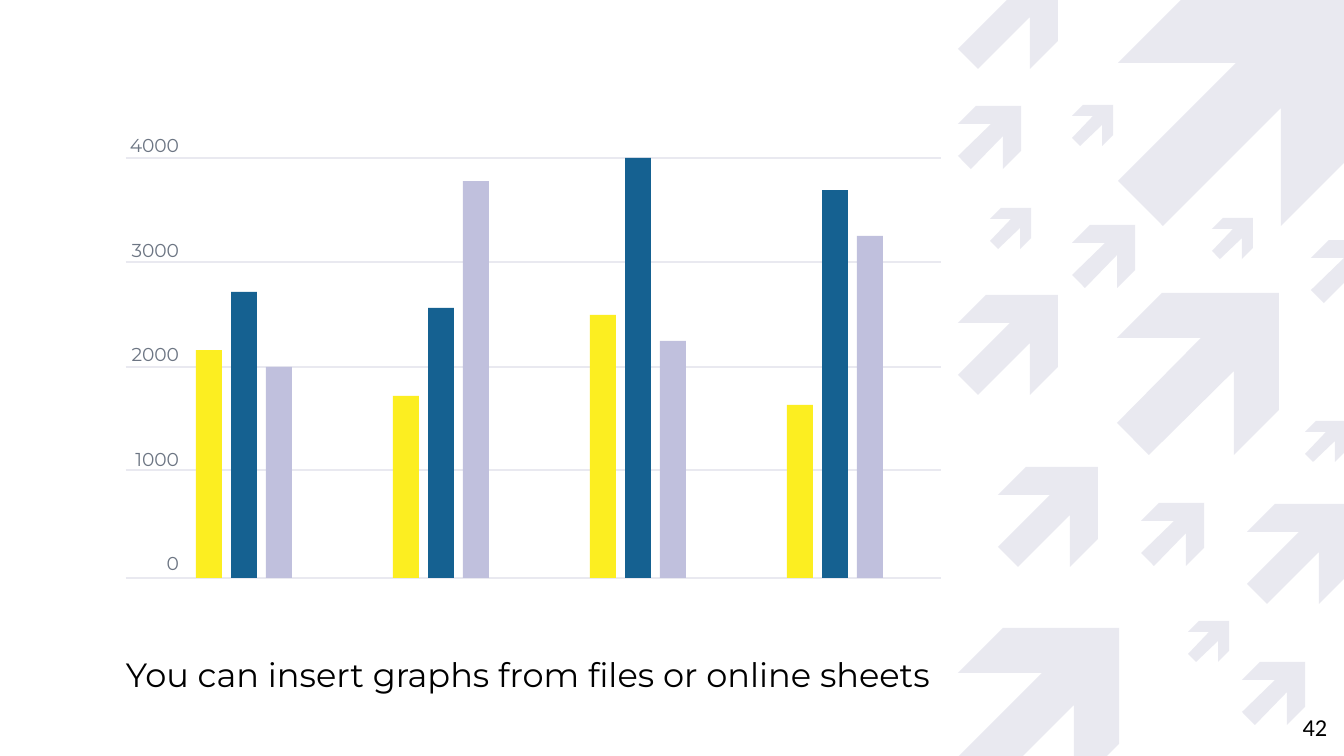
"""Build a slide with a grouped bar graph beside a pattern of arrows."""
from dataclasses import dataclass
from typing import Any, NamedTuple

from lxml import etree
from pptx import Presentation
from pptx.dml.color import RGBColor
from pptx.enum.shapes import MSO_CONNECTOR, MSO_SHAPE
from pptx.enum.text import MSO_ANCHOR, PP_ALIGN
from pptx.oxml.ns import qn
from pptx.shapes.base import BaseShape
from pptx.slide import Slide
from pptx.util import Emu, Pt

RECT, STRAIGHT = MSO_SHAPE.RECTANGLE, MSO_CONNECTOR.STRAIGHT
TOP, MIDDLE = MSO_ANCHOR.TOP, MSO_ANCHOR.MIDDLE
LEFT, RIGHT = PP_ALIGN.LEFT, PP_ALIGN.RIGHT
EMU_PER_PX = 914400 / 134.4
SLIDE_W, SLIDE_H = 1344, 756


@dataclass(frozen=True)
class Theme:
    pale: str = "E9E9F0"
    ink: str = "000000"
    muted: str = "6C7583"
    series: tuple[str, ...] = ("FCEE21", "156191", "C0C0DD")
    body_font: str = "Montserrat"
    number_font: str = "Calibri"
    caption_size: int = 18
    number_size: int = 13
    label_size: int = 10
    grid_width: float = 0.75


class Arrow(NamedTuple):
    x: int
    y: int
    size: int


class Bar(NamedTuple):
    x: int
    top: int
    color: str


class Label(NamedTuple):
    box: tuple[int, int, int, int]
    lines: tuple[str, ...]
    font: str
    size: int
    color: str
    align: PP_ALIGN
    anchor: MSO_ANCHOR
    spacing: dict[str, Any]


THEME = Theme()
ARROW_OUTLINE = ((0, 0.28), (0.52, 0.28), (0, 0.8), (0.2, 1), (0.72, 0.48),
                 (0.72, 1), (1, 0.72), (1, 0), (0.28, 0))
ARROWS = (
    Arrow(1188, 621, 41), Arrow(1242, 662, 63), Arrow(1141, 503, 63),
    Arrow(1117, 293, 162), Arrow(958, 628, 161), Arrow(958, -31, 100),
    Arrow(1212, 218, 41), Arrow(1072, 225, 63), Arrow(1247, 504, 100),
    Arrow(1311, 240, 63), Arrow(1072, 105, 41), Arrow(998, 467, 100),
    Arrow(1118, 0, 226), Arrow(1305, 421, 41), Arrow(990, 208, 41),
    Arrow(958, 295, 100), Arrow(958, 106, 63),
)
GRID_LEFT, GRID_RIGHT = 126, 941
GRID_ROWS = (158, 262, 367, 470, 578)
BASELINE = GRID_ROWS[-1]
BAR_LEFT, BAR_W, BAR_STEP, GROUP_STEP = 196, 26, 35, 197
BAR_TOPS = ((350, 292, 367), (396, 308, 181), (315, 158, 341), (405, 190, 236))
BARS = tuple(
    Bar(BAR_LEFT + g * GROUP_STEP + i * BAR_STEP, top, THEME.series[i])
    for g, tops in enumerate(BAR_TOPS) for i, top in enumerate(tops)
)
CAPTION = Label((126, 648, 1093, 51),
                ("You can insert graphs from files or online sheets",),
                THEME.body_font, THEME.caption_size, THEME.ink, LEFT, TOP,
                {"line_spacing": 1.15, "space_after": Pt(8)})
NUMBER = Label((1246, 698, 81, 57), ("42",), THEME.number_font,
               THEME.number_size, THEME.ink, RIGHT, MIDDLE, {})
SCALE = Label((126, 134, 53, 445), ("4000", "3000", "2000", "1000", "0"),
              THEME.body_font, THEME.label_size, THEME.muted, RIGHT, TOP,
              {"space_before": Pt(44)})


def px(n: float) -> Emu:
    """Turn pixels into EMU."""
    return Emu(round(n * EMU_PER_PX))


def set_all(obj: Any, values: dict[str, Any]) -> None:
    """Set each named attribute of an object."""
    for name, value in values.items():
        setattr(obj, name, value)


def paint(sp: BaseShape, color: str) -> None:
    """Give a shape a flat fill with no outline or shadow."""
    sp.shadow.inherit = False
    sp.fill.solid()
    sp.fill.fore_color.rgb = RGBColor.from_string(color)
    sp.line.fill.background()


def clip(points: list[tuple[float, float]], axis: int, limit: int,
         sign: int) -> list[tuple[float, float]]:
    """Cut a polygon at one edge of the slide."""
    kept = []
    for a, b in zip(points, points[1:] + points[:1]):
        da, db = sign * (limit - a[axis]), sign * (limit - b[axis])
        if da >= 0:
            kept.append(a)
        if da * db < 0:
            t = da / (da - db)
            kept.append((a[0] + t * (b[0] - a[0]), a[1] + t * (b[1] - a[1])))
    return kept


def draw_arrow(s: Slide, arrow: Arrow) -> None:
    """Draw the part of an arrow that lies on the slide."""
    points = [(arrow.x + u * arrow.size, arrow.y + v * arrow.size)
              for u, v in ARROW_OUTLINE]
    for axis, limit, sign in ((0, SLIDE_W, 1), (1, SLIDE_H, 1), (1, 0, -1)):
        points = clip(points, axis, limit, sign)
    builder = s.shapes.build_freeform(*points[0], scale=EMU_PER_PX)
    builder.add_line_segments(points[1:], close=True)
    paint(builder.convert_to_shape(), THEME.pale)


def draw_grid_line(s: Slide, y: int) -> None:
    """Draw one horizontal line of the graph."""
    line = s.shapes.add_connector(STRAIGHT, px(GRID_LEFT), px(y),
                                  px(GRID_RIGHT), px(y))
    line.line.color.rgb = RGBColor.from_string(THEME.pale)
    line.line.width = Pt(THEME.grid_width)
    etree.SubElement(line._element.spPr, qn("a:effectLst"))


def draw_bar(s: Slide, bar: Bar) -> None:
    """Draw one bar standing on the baseline."""
    sp = s.shapes.add_shape(RECT, px(bar.x), px(bar.top), px(BAR_W),
                            px(BASELINE - bar.top))
    paint(sp, bar.color)


def draw_label(s: Slide, label: Label) -> None:
    """Draw a text box with one paragraph for each line."""
    tf = s.shapes.add_textbox(*map(px, label.box)).text_frame
    set_all(tf, {"word_wrap": True, "vertical_anchor": label.anchor,
                 "margin_left": 0, "margin_right": 0,
                 "margin_top": 0, "margin_bottom": 0})
    for i, text in enumerate(label.lines):
        p = tf.add_paragraph() if i else tf.paragraphs[0]
        set_all(p, {"alignment": label.align, **label.spacing})
        if i == 0:
            p.space_before = Pt(0)
        r = p.add_run()
        r.text = text
        set_all(r.font, {"name": label.font, "size": Pt(label.size)})
        r.font.color.rgb = RGBColor.from_string(label.color)


def main() -> None:
    """Build and save the slide."""
    prs = Presentation()
    set_all(prs, {"slide_width": px(SLIDE_W), "slide_height": px(SLIDE_H)})
    s = prs.slides.add_slide(prs.slide_layouts[6])
    for arrow in ARROWS:
        draw_arrow(s, arrow)
    draw_label(s, CAPTION)
    draw_label(s, NUMBER)
    for y in GRID_ROWS:
        draw_grid_line(s, y)
    draw_label(s, SCALE)
    for bar in BARS:
        draw_bar(s, bar)
    prs.save("out.pptx")


if __name__ == "__main__":
    main()
